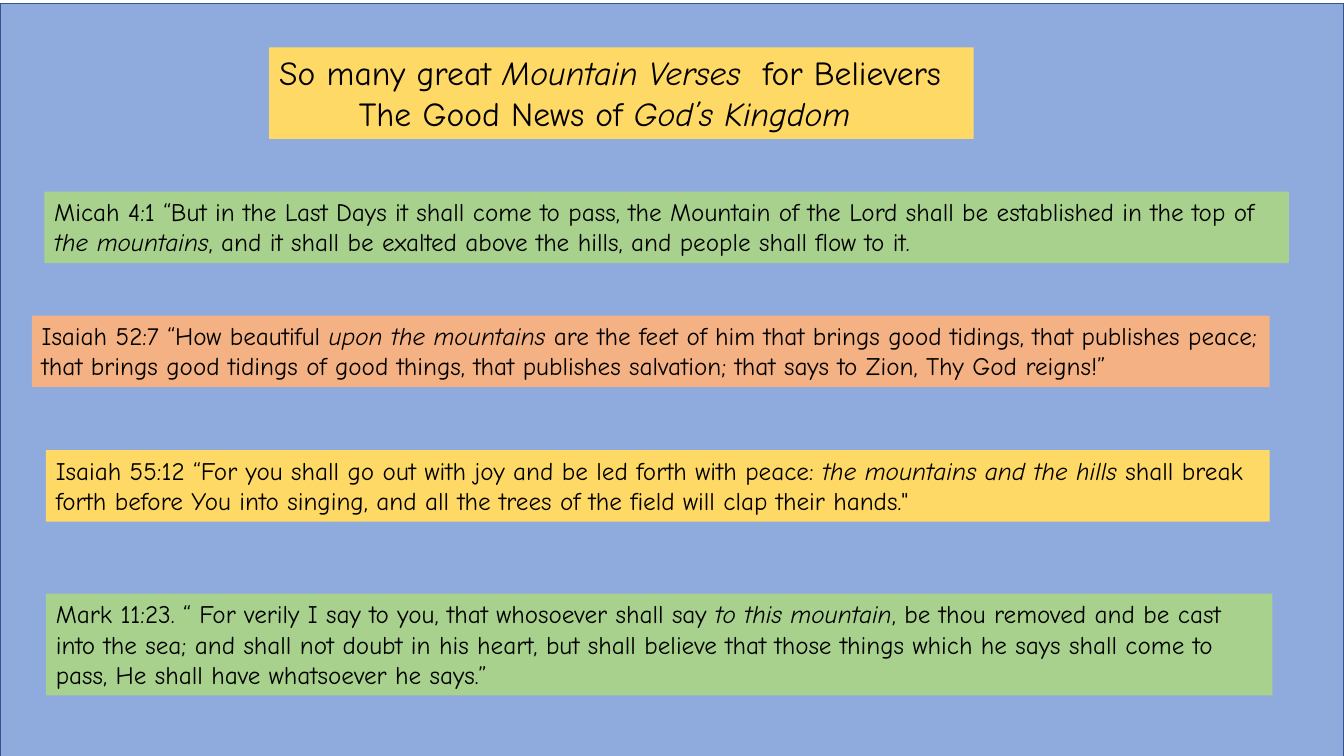
import pptx
import pptx.util
import pptx.dml.color
import pptx.enum.shapes
import pptx.enum.text
from dataclasses import dataclass

Pt = pptx.util.Pt
RGB = pptx.dml.color.RGBColor.from_string


@dataclass(frozen=True)
class Theme:
    font: str = "Comic Neue"
    title_size: float = 24
    verse_size: float = 18
    text: str = "000000"
    sky: str = "8FAADC"
    edge: str = "325491"
    gold: str = "FFD966"
    green: str = "A9D18E"
    peach: str = "F4B183"


THEME = Theme()
WIDTH, HEIGHT = 960, 540

TITLE = ["So many great *Mountain Verses  *for Believers",
         "The Good News of *God’s Kingdom*"]

# Box (left, top, width, height), fill, text with *italic* parts
VERSES = [
    ((31.7, 136.8, 889, 51.1), THEME.green,
     "Micah 4:1 “But in the Last Days it shall come to pass, the Mountain of the Lord "
     "shall be established in the top of *the mountains*, and it shall be exalted above "
     "the hills, and people shall flow to it."),
    ((22.7, 225.4, 884.2, 51.1), THEME.peach,
     "Isaiah 52:7 “How beautiful *upon the mountains *are the feet of him that brings "
     "good tidings, that publishes peace; that brings good tidings of good things, that "
     "publishes salvation; that says to Zion, Thy God reigns!”"),
    ((32.8, 321.5, 874.1, 51.1), THEME.gold,
     "Isaiah 55:12 “For you shall go out with joy and be led forth with peace: "
     "*the mountains and the hills *shall break forth before You into singing, and all "
     "the trees of the field will clap their hands.\""),
    ((32.8, 424.1, 876.2, 72.7), THEME.green,
     "Mark 11:23. “ For verily I say to you, that whosoever shall say *to this "
     "mountain*, be thou removed and be cast into the sea; and shall not doubt in his "
     "heart, but shall believe that those things which he says shall come to pass, "
     "He shall have whatsoever he says.”"),
]


def fill_panel(sp, box, color, paragraphs, size):
    """Place a text panel; text between asterisks becomes italic."""
    sp.left, sp.top, sp.width, sp.height = map(Pt, box)
    sp.fill.solid()
    sp.fill.fore_color.rgb = RGB(color)
    tf = sp.text_frame
    tf.word_wrap = True
    tf.auto_size = pptx.enum.text.MSO_AUTO_SIZE.NONE
    tf.vertical_anchor = pptx.enum.text.MSO_ANCHOR.TOP
    for i, text in enumerate(paragraphs):
        p = tf.paragraphs[0] if i == 0 else tf.add_paragraph()
        p.alignment = pptx.enum.text.PP_ALIGN.LEFT
        p.font.name = THEME.font
        p.font.size = Pt(size)
        p.font.color.rgb = RGB(THEME.text)
        for j, part in enumerate(text.split("*")):
            if part:
                r = p.add_run()
                r.text = part
                if j % 2:
                    r.font.italic = True
    return tf


def add_backdrop(s, box):
    sp = s.shapes.add_shape(pptx.enum.shapes.MSO_SHAPE.RECTANGLE, *map(Pt, box))
    sp.shadow.inherit = False
    sp.fill.solid()
    sp.fill.fore_color.rgb = RGB(THEME.sky)
    sp.line.color.rgb = RGB(THEME.edge)
    sp.line.width = Pt(1)
    # Behind the title placeholder
    s.shapes._spTree.insert(2, sp._element)


def add_title(s, box):
    tf = fill_panel(s.shapes.title, box, THEME.gold, TITLE, THEME.title_size)
    second_line = tf.paragraphs[1]._p.get_or_add_pPr()
    second_line.set("marL", str(Pt(57)))
    second_line.set("indent", "0")


def add_verse(s, box, color, text):
    sp = s.shapes.add_textbox(*map(Pt, box))
    fill_panel(sp, box, color, [text], THEME.verse_size)


def main():
    prs = pptx.Presentation()
    prs.slide_width, prs.slide_height = Pt(WIDTH), Pt(HEIGHT)
    s = prs.slides.add_slide(prs.slide_layouts[5])
    add_backdrop(s, (0, 2.5, WIDTH, HEIGHT))
    add_title(s, (192.2, 33.8, 503.3, 65.5))
    for box, color, text in VERSES:
        add_verse(s, box, color, text)
    prs.save("out.pptx")


if __name__ == "__main__":
    main()
